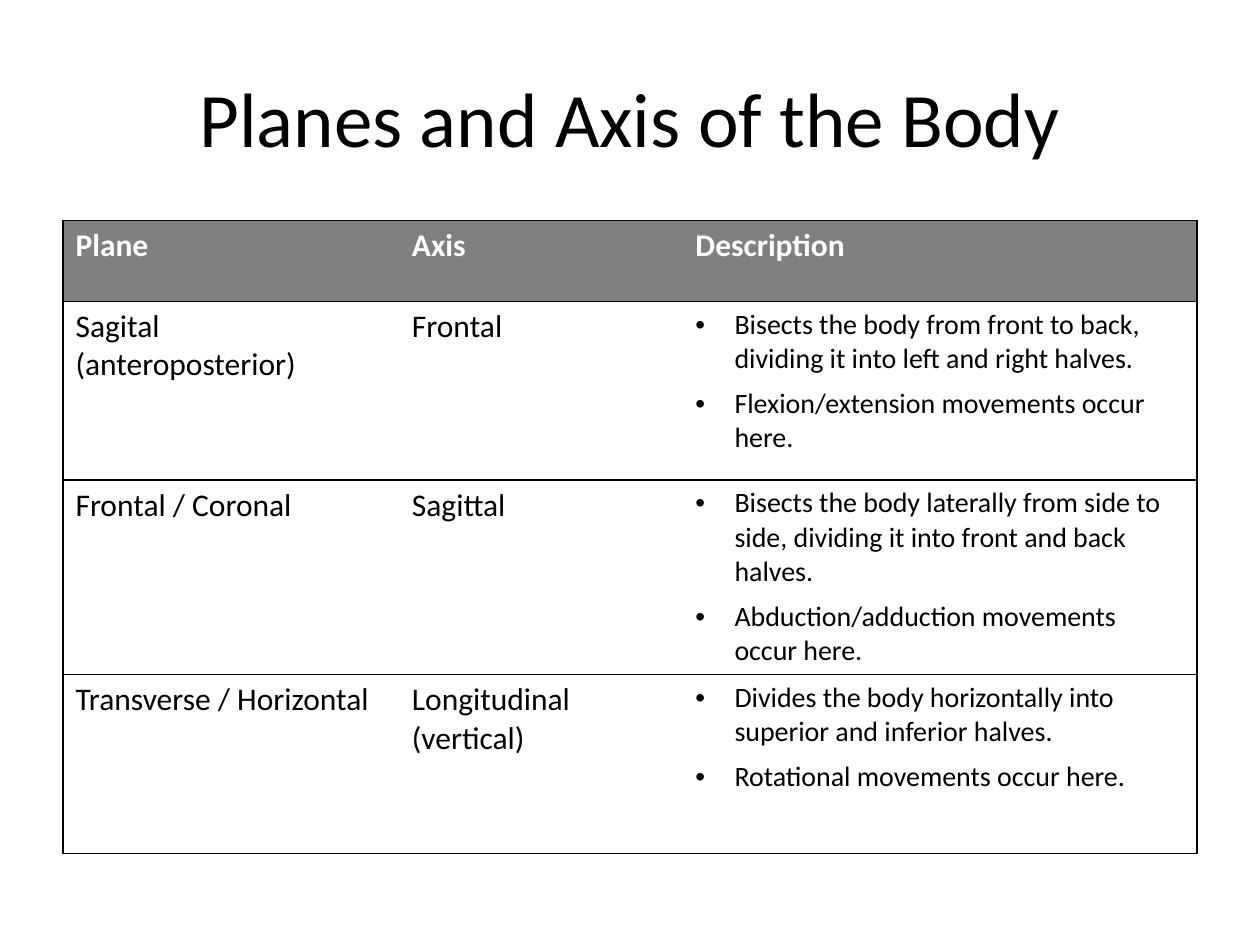
"""Build a slide with a table of body planes, axes and descriptions."""
from lxml import etree
from pptx import Presentation
from pptx.dml.color import RGBColor
from pptx.enum.text import MSO_ANCHOR, PP_ALIGN
from pptx.oxml.ns import qn
from pptx.util import Inches, Pt

MIDDLE = MSO_ANCHOR.MIDDLE
CENTER = PP_ALIGN.CENTER
BLACK, WHITE, GRAY = "000000", "FFFFFF", "808080"
WIDTHS = [2.67, 2.25, 4.08]
HEIGHTS = [0.64, 1.42, 1.42, 1.42]
ROWS = [
    ("Plane", "Axis", ["Description"]),
    ("Sagital (anteroposterior)", "Frontal", [
        "Bisects the body from front to back, dividing it into left and right halves.",
        "Flexion/extension movements occur here."]),
    ("Frontal / Coronal", "Sagittal", [
        "Bisects the body laterally from side to side, dividing it into front and back halves.",
        "Abduction/adduction movements occur here."]),
    ("Transverse / Horizontal", "Longitudinal (vertical)", [
        "Divides the body horizontally into superior and inferior halves.",
        "Rotational movements occur here."]),
]


def style(para, text, color, **format):
    run = para.add_run()
    run.text = text
    run.font.color.rgb = RGBColor.from_string(color)
    for name, value in {"name": "Calibri", **format}.items():
        setattr(run.font, name, value)


def border(cell, side, shown):
    line = etree.SubElement(cell._tc.get_or_add_tcPr(), qn("a:ln" + side), w=str(Pt(0.75)))
    fill = etree.SubElement(line, qn("a:solidFill" if shown else "a:noFill"))
    if shown:
        etree.SubElement(fill, qn("a:srgbClr"), val=BLACK)


deck = Presentation()
deck.slide_width, deck.slide_height = Inches(10), Inches(7.5)
slide = deck.slides.add_slide(deck.slide_layouts[5])

title = slide.shapes.title
title.left, title.top, title.width, title.height = map(Inches, (0.5, 0.3, 9, 1.25))
title.text_frame.vertical_anchor = MIDDLE
head = title.text_frame.paragraphs[0]
head.alignment = CENTER
style(head, "Planes and Axis of the Body", BLACK, size=Pt(44))

table = slide.shapes.add_table(
    len(ROWS), len(WIDTHS), Inches(0.5), Inches(1.75), Inches(9), Inches(sum(HEIGHTS))).table
table.first_row = table.horz_banding = False
for col, width in zip(table.columns, WIDTHS):
    col.width = Inches(width)
for row, height in zip(table.rows, HEIGHTS):
    row.height = Inches(height)

for r, row in enumerate(ROWS):
    for c, entry in enumerate(row):
        cell = table.cell(r, c)
        for side, shown in zip("LRTB", (c == 0, c == len(WIDTHS) - 1, True, True)):
            border(cell, side, shown)
        cell.fill.solid()
        cell.fill.fore_color.rgb = RGBColor.from_string(WHITE if r else GRAY)
        listed = r > 0 and c == 2
        frame = cell.text_frame
        for i, text in enumerate(entry if c == 2 else [entry]):
            para = frame.add_paragraph() if i else frame.paragraphs[0]
            style(para, text, BLACK if r else WHITE, size=Pt(16 if listed else 18), bold=r == 0)
            if listed:
                para.space_after = Pt(12 if (r, i) == (2, 1) else 6)
                props = para._p.get_or_add_pPr()
                props.set("marL", str(Inches(0.31)))
                props.set("indent", str(Inches(-0.31)))
                etree.SubElement(props, qn("a:buFont"), typeface="Arial")
                etree.SubElement(props, qn("a:buChar"), char="•")

deck.save("out.pptx")
